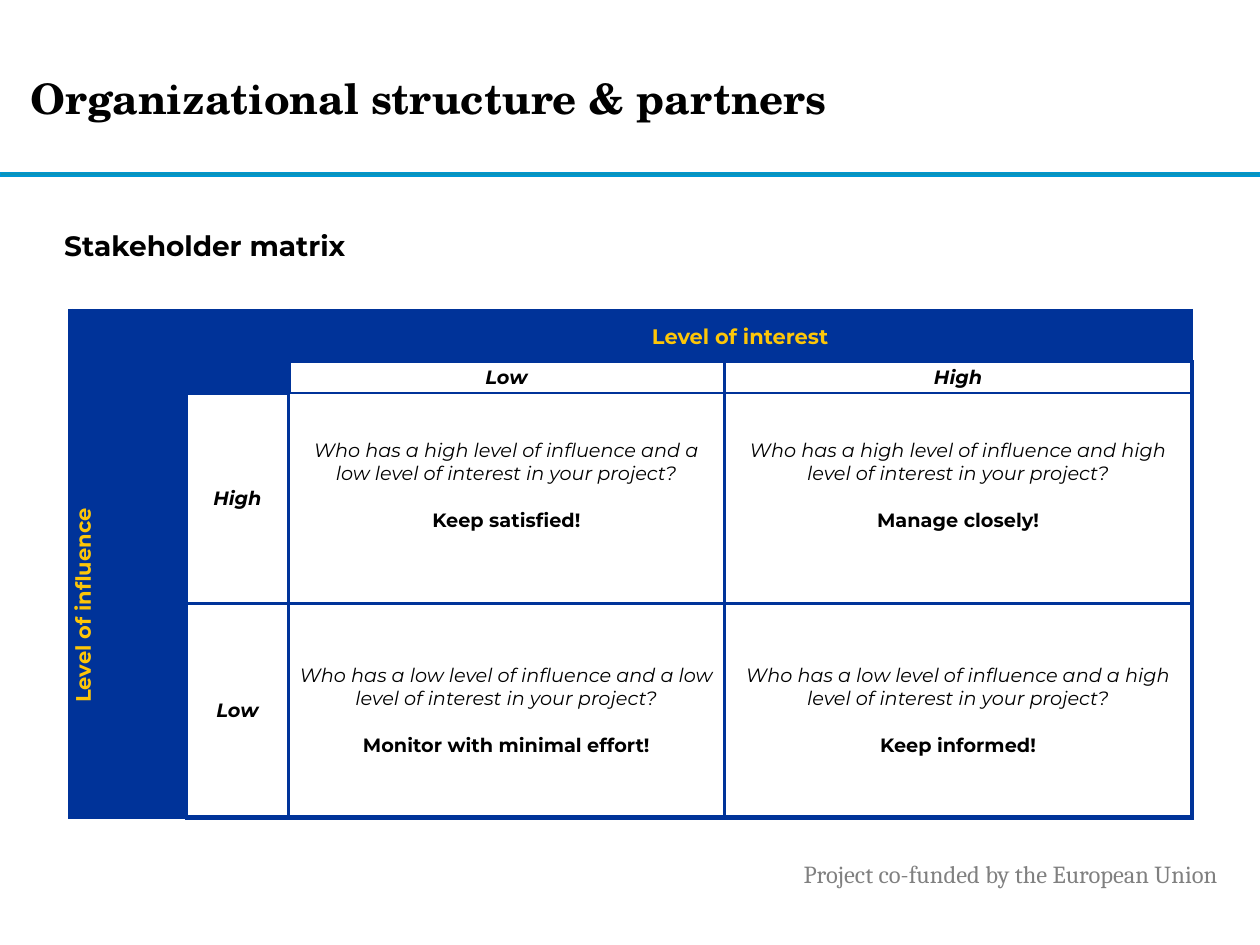
from dataclasses import dataclass

from lxml.etree import SubElement
from pptx import Presentation
from pptx.dml.color import RGBColor
from pptx.enum.shapes import MSO_SHAPE
from pptx.enum.text import MSO_ANCHOR, MSO_AUTO_SIZE, PP_ALIGN
from pptx.oxml import parse_xml
from pptx.oxml.ns import nsdecls, qn
from pptx.util import Inches, Pt

BLUE = RGBColor(0x00, 0x33, 0x99)
GOLD = RGBColor(0xFD, 0xC6, 0x08)
TEAL = RGBColor(0x0C, 0x94, 0xB7)
CYAN = RGBColor(0x00, 0x96, 0xD3)
GRAY = RGBColor(0x80, 0x80, 0x80)
BLACK = RGBColor(0, 0, 0)
WHITE = RGBColor(0xFF, 0xFF, 0xFF)

SANS = "Montserrat"
COLS = [0.92, 0.81, 3.46, 3.71]
ROWS = [0.4, 0.25, 1.67, 1.7]


@dataclass
class Label:
    row: int
    col: int
    text: str
    axis: bool = False


@dataclass
class Group:
    row: int
    col: int
    ask: str
    act: str
    lift: float = 0


LABELS = [
    Label(0, 2, "Level of interest", True),
    Label(2, 0, "Level of influence", True),
    Label(1, 2, "Low"),
    Label(1, 3, "High"),
    Label(2, 1, "High"),
    Label(3, 1, "Low"),
]
GROUPS = [
    Group(2, 2, "Who has a high level of influence and a low level of "
          "interest in your project?", "Keep satisfied!", 0.2),
    Group(2, 3, "Who has a high level of influence and high level of "
          "interest in your project?", "Manage closely!", 0.2),
    Group(3, 2, "Who has a low level of influence and a low level of "
          "interest in your project?", "Monitor with minimal effort!"),
    Group(3, 3, "Who has a low level of influence and a high level of "
          "interest in your project?", "Keep informed!"),
]


def style(para, size: float, color: RGBColor, name: str = SANS,
          bold: bool = False, italic: bool = False) -> None:
    font = para.font
    font.size, font.name = Pt(size), name
    font.bold, font.italic = bold, italic
    font.color.rgb = color


def place(shape, left: float, top: float, width: float, height: float) -> None:
    shape.left, shape.top = Inches(left), Inches(top)
    shape.width, shape.height = Inches(width), Inches(height)


def pad(frame, side: float, edge: float) -> None:
    frame.margin_left = frame.margin_right = Inches(side)
    frame.margin_top = frame.margin_bottom = Inches(edge)


def edge_cell(cell, row: int, col: int) -> None:
    """Thick lines on the outside and beside the blue heads, thin elsewhere."""
    thick = {
        "L": col == 0 or (row == 1 and col == 2),
        "R": col == 3 or (row == 1 and col == 1),
        "T": row == 0 or (row == 2 and col == 1),
        "B": row == 3 or (row == 1 and col == 1),
    }
    props = cell._tc.get_or_add_tcPr()
    for spot, (side, wide) in enumerate(thick.items()):
        width = Pt(3 if wide else 1.5)
        props.insert(spot, parse_xml(
            f'<a:ln{side} {nsdecls("a")} w="{width}"><a:solidFill>'
            f'<a:srgbClr val="{BLUE}"/></a:solidFill></a:ln{side}>'))


def draw_grid(slide):
    grid = slide.shapes.add_table(
        len(ROWS), len(COLS), Inches(0.56), Inches(2.47),
        Inches(sum(COLS)), Inches(sum(ROWS))).table
    grid.first_row = grid.horz_banding = False
    for col, width in zip(grid.columns, COLS):
        col.width = Inches(width)
    for row, height in zip(grid.rows, ROWS):
        row.height = Inches(height)
    for r in range(len(ROWS)):
        for c in range(len(COLS)):
            cell = grid.cell(r, c)
            head = r == 0 or c == 0 or (r == 1 and c == 1)
            cell.fill.solid()
            cell.fill.fore_color.rgb = BLUE if head else WHITE
            edge_cell(cell, r, c)
            pad(cell, 0.06, 0)
            cell.vertical_anchor = MSO_ANCHOR.MIDDLE
            # Keeps empty cells from stretching their row
            end = cell.text_frame.paragraphs[0]._p.get_or_add_endParaRPr()
            end.set("sz", "1100")
    for start, stop in [((0, 0), (0, 1)), ((0, 2), (0, 3)),
                        ((1, 0), (1, 1)), ((2, 0), (3, 0))]:
        grid.cell(*start).merge(grid.cell(*stop))
    return grid


def add_label(grid, item: Label) -> None:
    cell = grid.cell(item.row, item.col)
    para = cell.text_frame.paragraphs[0]
    para.text = item.text
    para.alignment = PP_ALIGN.CENTER
    if item.axis:
        style(para, 12, GOLD, bold=True)
    else:
        style(para, 11, BLACK, bold=True, italic=True)
    if item.col == 0:
        cell._tc.get_or_add_tcPr().set("vert", "vert270")


def add_group(grid, item: Group) -> None:
    cell = grid.cell(item.row, item.col)
    cell.margin_bottom = Inches(item.lift)
    ask = cell.text_frame.paragraphs[0]
    act = cell.text_frame.add_paragraph()
    ask.text, act.text = item.ask, item.act
    ask.alignment = act.alignment = PP_ALIGN.CENTER
    act.space_before = Pt(13.4)
    style(ask, 11, BLACK, italic=True)
    style(act, 11, BLACK, bold=True)


def main() -> None:
    deck = Presentation()
    deck.slide_width, deck.slide_height = Inches(10), Inches(7.5)
    slide = deck.slides.add_slide(deck.slide_layouts[1])
    title, body = slide.placeholders

    # Rule under the title
    bar = slide.shapes.add_shape(MSO_SHAPE.RECTANGLE, 0, Inches(1.37),
                                 Inches(10), Inches(0.03))
    bar.shadow.inherit = False
    bar.fill.solid()
    bar.fill.fore_color.rgb = TEAL
    bar.line.color.rgb = CYAN
    bar.line.width = Pt(1)

    # Title and subtitle
    place(title, 0.24, 0.18, 7.54, 1.19)
    place(body, 0.51, 1.76, 8.49, 5.06)
    for shape, text, size, name, edge, anchor in [
            (title, "Organizational structure & partners", 24,
             "TeX Gyre Schola", 0, MSO_ANCHOR.MIDDLE),
            (body, "Stakeholder matrix", 16, SANS, 0.05, MSO_ANCHOR.TOP)]:
        frame = shape.text_frame
        frame.auto_size = MSO_AUTO_SIZE.NONE
        frame.vertical_anchor = anchor
        pad(frame, 0, edge)
        para = frame.paragraphs[0]
        para.text = text
        para.alignment = PP_ALIGN.LEFT
        para.space_before = Pt(0)
        props = para._p.get_or_add_pPr()
        props.set("marL", "0")
        props.set("indent", "0")
        SubElement(props, qn("a:buNone"))
        style(para, size, BLACK, name, bold=True)

    # Stakeholder matrix
    grid = draw_grid(slide)
    for item in LABELS:
        add_label(grid, item)
    for item in GROUPS:
        add_group(grid, item)

    # Footer
    foot = slide.shapes.add_textbox(Inches(6.28), Inches(6.77),
                                    Inches(3.66), Inches(0.34))
    foot.text_frame.word_wrap = True
    para = foot.text_frame.paragraphs[0]
    para.text = "Project co-funded by the European Union"
    style(para, 14, GRAY, "Cambria")

    deck.save("out.pptx")


if __name__ == "__main__":
    main()
